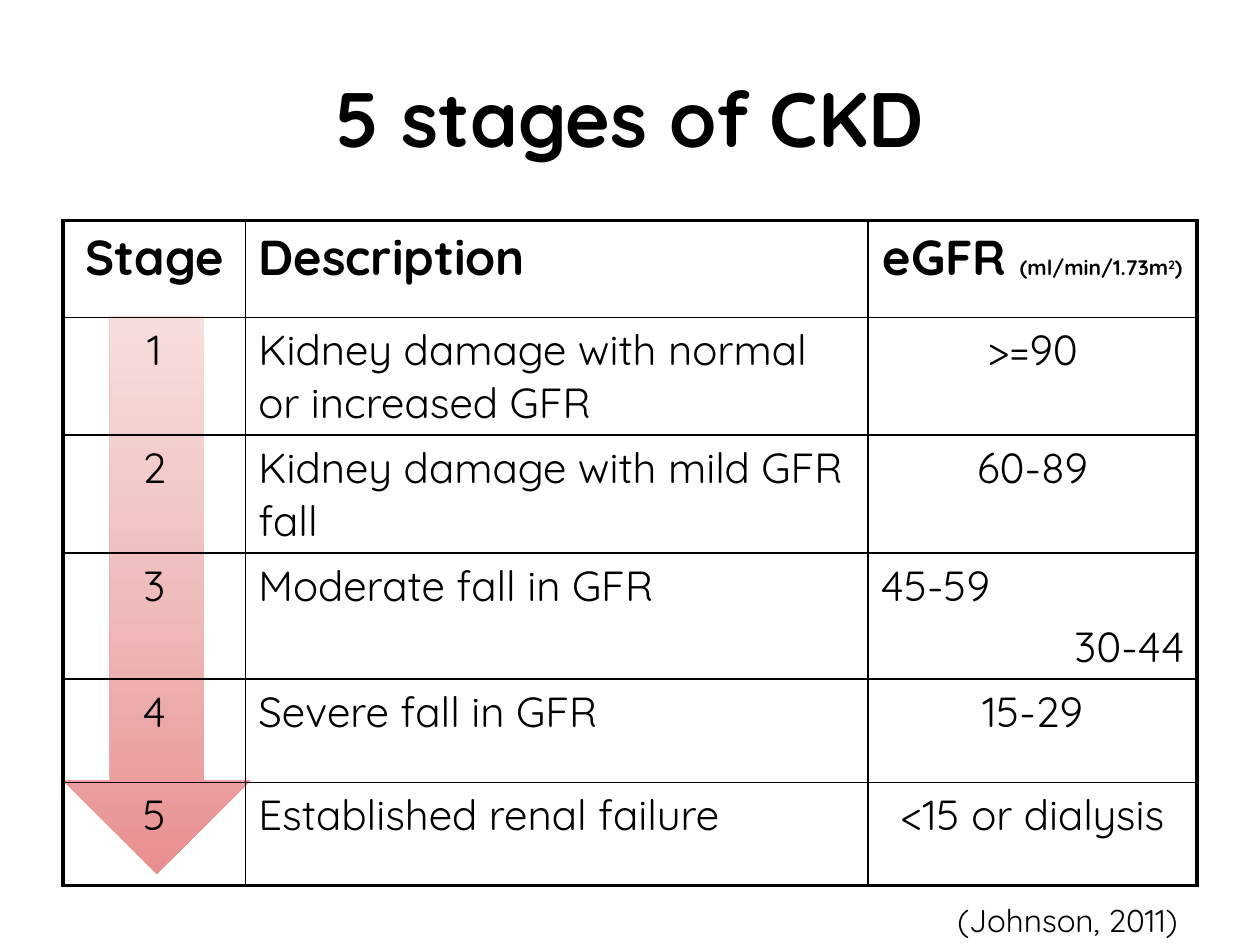
"""Build the slide on the five stages of chronic kidney disease."""
from copy import deepcopy

from lxml.etree import SubElement
from pptx import Presentation
from pptx.dml.color import RGBColor
from pptx.enum.shapes import MSO_SHAPE
from pptx.enum.text import MSO_ANCHOR, PP_ALIGN
from pptx.oxml.ns import qn
from pptx.util import Inches, Pt

COLORS = {"ink": "000000", "deep": "E98F8F", "mid": "EFBCBC", "pale": "F7DEDE"}
LEFT, CENTER, RIGHT = PP_ALIGN.LEFT, PP_ALIGN.CENTER, PP_ALIGN.RIGHT


def add_run(p, text, size, bold=False):
    r = p.add_run()
    r.text = text
    r.font.color.rgb = RGBColor.from_string(COLORS["ink"])
    for name, value in {"name": "Quicksand", "size": Pt(size), "bold": bold}.items():
        setattr(r.font, name, value)
    return r


def format_paragraph(p, align, before):
    spacing = SubElement(p._p.get_or_add_pPr(), qn("a:spcBef"))
    SubElement(spacing, qn("a:spcPct"), val=str(before * 1000))
    p.alignment = align


prs = Presentation()
prs.slide_width, prs.slide_height = Inches(10), Inches(7.5)
slide = prs.slides.add_slide(prs.slide_layouts[5])

title = slide.shapes.title
title_box = {"left": 0.5, "top": 0.3, "width": 9, "height": 1.25}
for name, value in title_box.items():
    setattr(title, name, Inches(value))
tf = title.text_frame
tf.vertical_anchor = MSO_ANCHOR.MIDDLE
p = tf.paragraphs[0]
p.alignment = CENTER
add_run(p, "5 stages of CKD", 44, True)

arrow = slide.shapes.add_shape(
    MSO_SHAPE.DOWN_ARROW, Inches(0.5), Inches(2.51), Inches(1.49), Inches(4.43))
arrow.shadow.inherit = False
arrow.line.fill.background()
arrow.fill.gradient()
arrow.fill.gradient_angle = 90
stop_list = arrow._element.spPr.find(qn("a:gradFill")).find(qn("a:gsLst"))
stop_list.insert(1, deepcopy(stop_list[0]))
for stop, shade, position in zip(
        arrow.fill.gradient_stops, ("deep", "mid", "pale"), (0, 0.5, 1)):
    stop.color.rgb = RGBColor.from_string(COLORS[shade])
    stop.position = position

col_widths = [1.45, 4.94, 2.61]
row_heights = [0.77, 0.9, 0.9, 0.98, 0.82, 0.82]
rows = [
    ("Stage", "Description", "eGFR "),
    ("1", "Kidney damage with normal or increased GFR", ">=90"),
    ("2", "Kidney damage with mild GFR fall", "60-89"),
    ("3", "Moderate fall in GFR", "45-59\n30-44"),
    ("4", "Severe fall in GFR", "15-29"),
    ("5", "Established renal failure", "<15 or dialysis"),
]
last_row, last_col = len(rows) - 1, len(col_widths) - 1
table = slide.shapes.add_table(
    len(rows), len(col_widths), Inches(0.5), Inches(1.75),
    Inches(sum(col_widths)), Inches(sum(row_heights))).table
table.first_row = table.horz_banding = False
for column, width in zip(table.columns, col_widths):
    column.width = Inches(width)
for row, height in zip(table.rows, row_heights):
    row.height = Inches(height)

for i, row in enumerate(rows):
    for j, text in enumerate(row):
        cell = table.cell(i, j)
        tf = cell.text_frame
        lines = text.split("\n")
        if len(lines) > 1:
            aligns = (LEFT, RIGHT)
        else:
            aligns = (LEFT if j == 1 else CENTER,)
        for n, (line, align) in enumerate(zip(lines, aligns)):
            p = tf.add_paragraph() if n else tf.paragraphs[0]
            format_paragraph(p, align, 20)
            add_run(p, line, 24 if i else 28, i == 0)
        outer = {"L": j == 0, "R": j == last_col, "T": i == 0, "B": i == last_row}
        for side, is_outer in outer.items():
            width = Pt(2.25 if is_outer else 1)
            ln = SubElement(cell._tc.get_or_add_tcPr(), qn(f"a:ln{side}"), w=str(width))
            SubElement(SubElement(ln, qn("a:solidFill")), qn("a:srgbClr"), val=COLORS["ink"])
        cell.fill.background()

p = table.cell(0, last_col).text_frame.paragraphs[0]
for text, baseline in (("(ml/min/1.73m", 0), ("2", 30000), (")", 0)):
    r = add_run(p, text, 12, True)
    r.font._element.set("baseline", str(baseline))

source = slide.shapes.add_textbox(Inches(7.5), Inches(7.1), Inches(2.08), Inches(0.4))
tf = source.text_frame
tf.word_wrap = True
p = tf.paragraphs[0]
format_paragraph(p, LEFT, 50)
add_run(p, "(Johnson, 2011)", 18)

prs.save("out.pptx")
